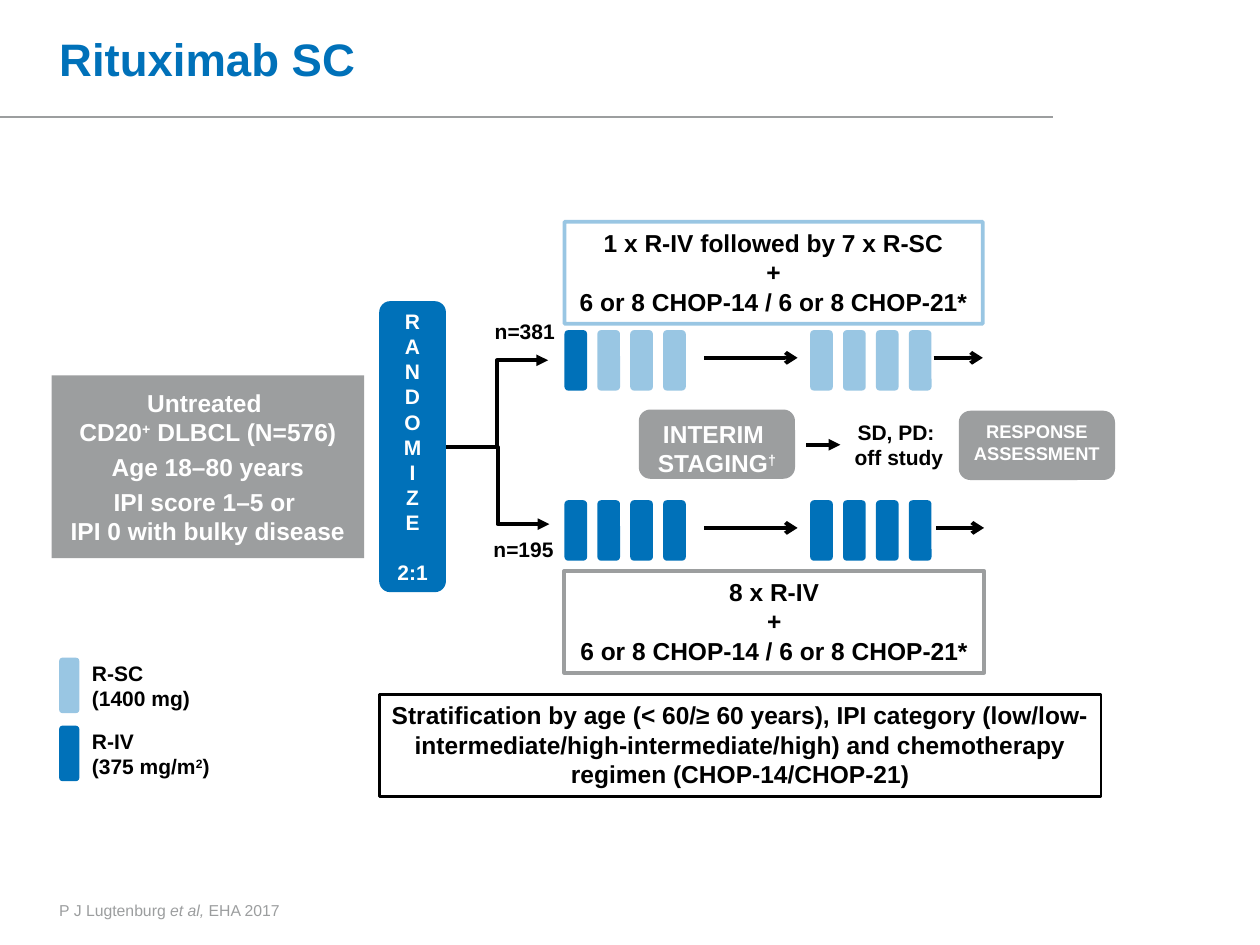
from pptx import Presentation
from pptx.dml.color import RGBColor
from pptx.enum.shapes import MSO_CONNECTOR, MSO_SHAPE
from pptx.enum.text import MSO_ANCHOR, PP_ALIGN
from pptx.oxml.ns import qn
from pptx.util import Inches, Pt
from lxml.etree import SubElement

BLUE, GREY, BLACK, WHITE = "0071B9", "9C9E9F", "000000", "FFFFFF"
TOP, MIDDLE, BOTTOM = MSO_ANCHOR.TOP, MSO_ANCHOR.MIDDLE, MSO_ANCHOR.BOTTOM
LEFT, CENTER = PP_ALIGN.LEFT, PP_ALIGN.CENTER

prs = Presentation()
prs.slide_width, prs.slide_height = Inches(10), Inches(7.5)
# Square grid of 100 columns by 75 rows
COL, ROW = prs.slide_width / 100, prs.slide_height / 75
s = prs.slides.add_slide(prs.slide_layouts[5])


def paint(fill, color, alpha=100):
    """Solid colour; alpha is the opacity in percent."""
    fill.solid()
    fill.fore_color.rgb = RGBColor.from_string(color)
    if alpha < 100:
        clr = fill._xPr.find(qn("a:solidFill"))[0]
        SubElement(clr, qn("a:alpha")).set("val", str(alpha * 1000))


def write(sp, paragraphs, size, color, align=CENTER, anchor=TOP, inset=(1, 0.5),
          wrap=True, bold=True, after=0, mark=("baseline", "30000")):
    """Fill a shape with text; parts between ^ signs get the mark attribute."""
    tf = sp.text_frame
    x, y = int(inset[0] * COL), int(inset[1] * ROW)
    frame = {"word_wrap": wrap, "vertical_anchor": anchor, "margin_left": x,
             "margin_right": x, "margin_top": y, "margin_bottom": y}
    for name, value in frame.items():
        setattr(tf, name, value)
    for i, text in enumerate(paragraphs):
        p = tf.add_paragraph() if i else tf.paragraphs[0]
        p.alignment, p.space_before, p.space_after = align, Pt(0), Pt(after)
        for n, row in enumerate(text.split("\n")):
            if n:
                p.add_line_break()
            for k, part in enumerate(row.split("^")):
                if not part:
                    continue
                r = p.add_run()
                r.text = part
                for name, value in {"name": "Arial", "size": Pt(size), "bold": bold}.items():
                    setattr(r.font, name, value)
                paint(r.font.fill, color)
                if k % 2:
                    r._r.get_or_add_rPr().set(*mark)


# Title
title = s.shapes.title
title.left, title.top = int(4.7 * COL), 0
title.width, title.height = int(82.7 * COL), int(9.3 * ROW)
write(title, ["Rituximab SC"], 26, BLUE, LEFT, MIDDLE, (0, 0.5))

# Boxes: place, corner (None is square), fill, outline (colour, width, opacity), text
CHOP = "6 or 8 CHOP-14 / 6 or 8 CHOP-21*"
boxes = [
    ((30.1, 55.1, 57.3, 8.1), 0, None, (BLACK, 1.5),
     (["Stratification by age (< 60/≥ 60 years), IPI category "
       "(low/low-intermediate/high-intermediate/high) and "
       "chemotherapy regimen (CHOP-14/CHOP-21)"], 14, BLACK), {}),
    ((4.1, 29.8, 24.8, 14.5), 0, GREY, None,
     (["Untreated \nCD20^+^ DLBCL (N=576)", "Age 18–80 years",
       "IPI score 1–5 or \nIPI 0 with bulky disease"], 14, WHITE),
     {"anchor": MIDDLE, "after": 3}),
    ((50.7, 32.5, 12.4, 5.5), 0.167, GREY, None,
     (["INTERIM \nSTAGING^†^"], 14, WHITE), {"inset": (0.4, 0.5)}),
    ((76.1, 32.6, 12.4, 5.5), 0.167, GREY, None,
     (["RESPONSE ASSESSMENT"], 10.5, WHITE), {"inset": (0.4, 0.5)}),
    ((30.1, 23.9, 5.3, 23.1), 0.167, BLUE, None,
     ([*"RANDOMIZE", "2:1"], 12, WHITE), {"anchor": MIDDLE}),
    ((44.8, 17.6, 33.2, 8.1), None, None, (BLUE, 2.25, 40),
     (["1 x R-IV followed by 7 x R-SC", "+", CHOP], 14, BLACK), {}),
    ((44.8, 45.3, 33.3, 8.1), None, None, (GREY, 2.25),
     (["8 x R-IV", "+", CHOP], 14, BLACK), {}),
]

# Dose bars: legend, then two groups of four cycles in each arm
boxes += [((4.7, y, 1.6, 4.4), 0.167, (BLUE, alpha), None, None, {})
          for y, alpha in ((52.2, 40), (57.6, 100))]
for y, alpha in ((26.2, 40), (39.7, 100)):
    for group in (44.8, 64.3):
        for i in range(4):
            first = group == 44.8 and i == 0
            boxes.append(((group + 2.61 * i, y, 1.8, 4.8), 0.167,
                          (BLUE, 100 if first else alpha), None, None, {}))

for (x, y, w, h), corner, fill, outline, text, options in boxes:
    kind = MSO_SHAPE.RECTANGLE if corner is None else MSO_SHAPE.ROUNDED_RECTANGLE
    sp = s.shapes.add_shape(kind, int(x * COL), int(y * ROW), int(w * COL), int(h * ROW))
    sp.shadow.inherit = False
    if corner is not None:
        sp.adjustments[0] = corner
    if fill is None:
        sp.fill.background()
    else:
        paint(sp.fill, *([fill] if isinstance(fill, str) else fill))
    if outline:
        color, width, *alpha = outline
        paint(sp.line.fill, color, *alpha)
        sp.line.width = Pt(width)
    else:
        sp.line.fill.background()
    if text:
        write(sp, *text, **options)
    # One empty row sets the ratio apart from the letters
    if text and text[0][-1] == "2:1":
        sp.text_frame.paragraphs[-1].space_before = Pt(14)

# Labels
legend = {"align": LEFT, "anchor": MIDDLE, "inset": (0, 0), "wrap": False}
labels = [
    ((67.2, 33.3, 8.3, 4), (["SD, PD: ", "off study"], 12, BLACK), {"inset": (0, 0)}),
    ((7.3, 52.4, 8.2, 4), (["R-SC", "(1400 mg)"], 12, BLACK), legend),
    ((7.3, 57.8, 9.5, 4), (["R-IV", "(375 mg/m^2^)"], 12, BLACK), legend),
    ((38.1, 24.8, 7.1, 3), (["n=381"], 12, BLACK), {"wrap": False}),
    ((38, 42.1, 7.1, 3), (["n=195"], 12, BLACK), {"wrap": False}),
    ((4.7, 70.6, 76.2, 2.4), (["P J Lugtenburg ^et al,^ EHA 2017"], 9, GREY),
     {"align": LEFT, "anchor": BOTTOM, "inset": (0, 0), "bold": False, "mark": ("i", "1")}),
]
for (x, y, w, h), text, options in labels:
    sp = s.shapes.add_textbox(int(x * COL), int(y * ROW), int(w * COL), int(h * ROW))
    write(sp, *text, **options)

# Header rule, arrows and randomization branches
STRAIGHT, ELBOW = MSO_CONNECTOR.STRAIGHT, MSO_CONNECTOR.ELBOW
lines = [
    (STRAIGHT, (0, 9.3, 83.6, 9.3), GREY, 1, None),
    (STRAIGHT, (64, 35.3, 66.7, 35.3), BLACK, 2.25, "triangle"),
    (STRAIGHT, (55.9, 28.4, 63.3, 28.4), BLACK, 2.25, "arrow"),
    (STRAIGHT, (55.9, 41.9, 63.3, 41.9), BLACK, 2.25, "arrow"),
    (STRAIGHT, (74.1, 28.4, 78, 28.4), BLACK, 2.25, "arrow"),
    (STRAIGHT, (74.3, 41.9, 78.1, 41.9), BLACK, 2.25, "arrow"),
    (ELBOW, (35.4, 35.5, 43.5, 28.6), BLACK, 2.25, "triangle"),
    (ELBOW, (35.4, 35.5, 43.6, 41.6), BLACK, 2.25, "triangle"),
]
for kind, (x1, y1, x2, y2), color, width, head in lines:
    line = s.shapes.add_connector(kind, int(x1 * COL), int(y1 * ROW),
                                  int(x2 * COL), int(y2 * ROW))
    paint(line.line.fill, color)
    line.line.width = Pt(width)
    if head:
        SubElement(line.line._get_or_add_ln(), qn("a:tailEnd")).set("type", head)
    SubElement(line._element.spPr, qn("a:effectLst"))

prs.save("out.pptx")
